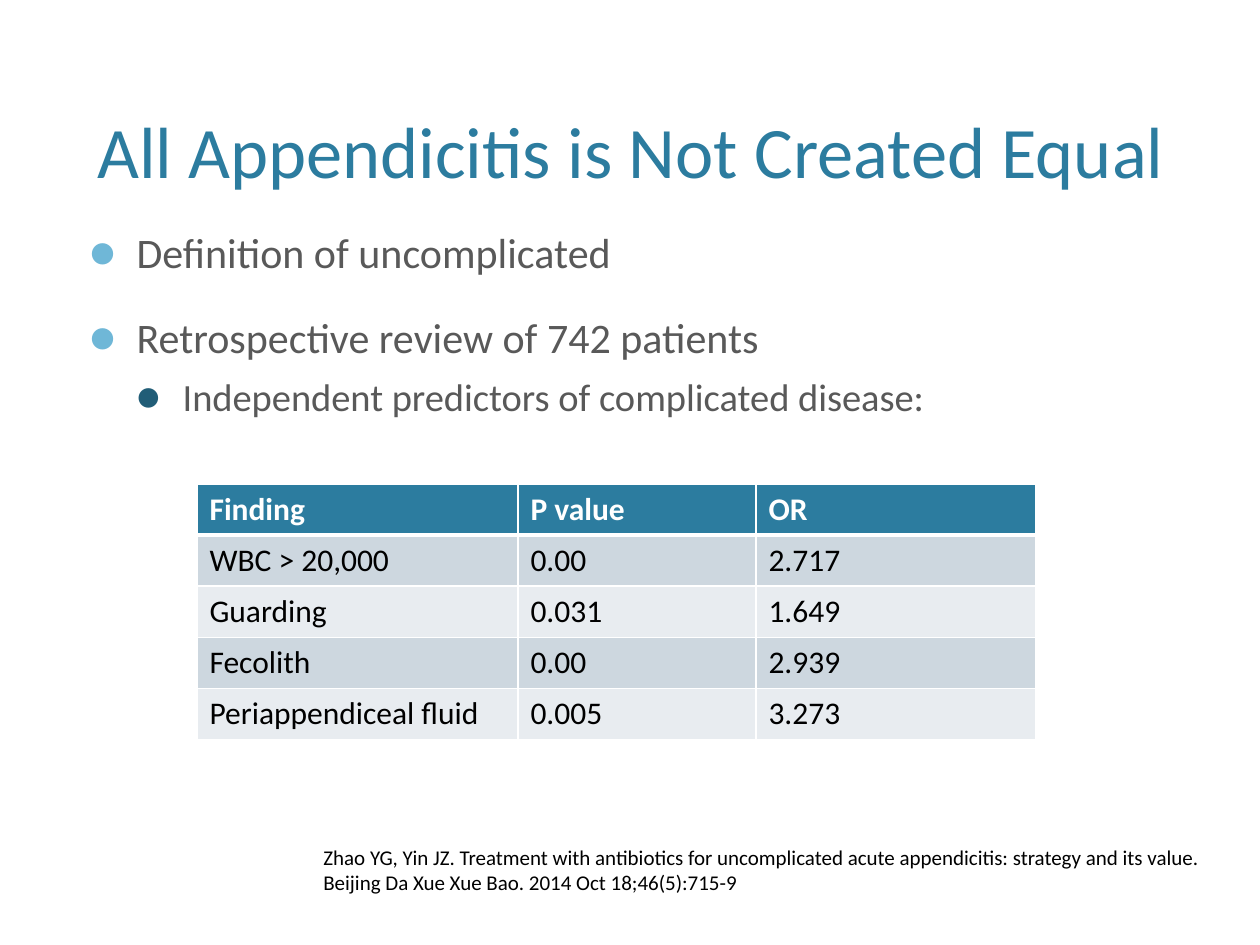
import pptx
import pptx.dml.color
import pptx.enum.text
import pptx.oxml
import pptx.oxml.ns
import pptx.util

PX = 914400 / 126
FONT = "Calibri"
TEAL = "2C7C9F"
GRAY = "595959"
NS = pptx.oxml.ns.nsdecls("a")

BULLETS = [
    (0, "Definition of uncomplicated"),
    (0, "Retrospective review of 742 patients"),
    (1, "Independent predictors of complicated disease:"),
]
LEVELS = [
    {"indent": 48, "hang": 48, "before": 20, "size": 24, "bullet": "6FB7D7"},
    {"indent": 94, "hang": 47, "before": 6, "size": 22, "bullet": "215D77"},
]
FINDINGS = [
    ("Finding", "P value", "OR"),
    ("WBC > 20,000", "0.00", "2.717"),
    ("Guarding", "0.031", "1.649"),
    ("Fecolith", "0.00", "2.939"),
    ("Periappendiceal fluid", "0.005", "3.273"),
]
CITATION = [
    "Zhao YG, Yin JZ. Treatment with antibiotics for uncomplicated acute "
    "appendicitis: strategy and its value.",
    "Beijing Da Xue Xue Bao. 2014 Oct 18;46(5):715-9",
]


def px(n):
    return pptx.util.Emu(round(n * PX))


def rgb(color):
    return pptx.dml.color.RGBColor.from_string(color)


def place(sp, box):
    for name, value in zip(("left", "top", "width", "height"), box):
        setattr(sp, name, px(value))


def set_text(p, text, size, color, bold=False):
    r = p.add_run()
    r.text = text
    r.font.color.rgb = rgb(color)
    style = {"name": FONT, "size": pptx.util.Pt(size), "bold": bold}
    for name, value in style.items():
        setattr(r.font, name, value)


def set_frame(tf, anchor):
    style = {
        "word_wrap": True,
        "auto_size": pptx.enum.text.MSO_AUTO_SIZE.NONE,
        "vertical_anchor": anchor,
    }
    for name, value in style.items():
        setattr(tf, name, value)


def next_paragraph(tf, i):
    return tf.add_paragraph() if i else tf.paragraphs[0]


def set_bullet(p, level):
    p.space_before = pptx.util.Pt(level["before"])
    pPr = p._p.get_or_add_pPr()
    pPr.set("marL", str(px(level["indent"])))
    pPr.set("indent", str(-px(level["hang"])))
    for xml in (
        f'<a:buClr {NS}><a:srgbClr val="{level["bullet"]}"/></a:buClr>',
        f'<a:buSzPct {NS} val="110000"/>',
        f'<a:buFont {NS} typeface="{FONT}"/>',
        f'<a:buChar {NS} char="●"/>',
    ):
        pPr.append(pptx.oxml.parse_xml(xml))


def set_borders(cell, widths):
    tcPr = cell._tc.get_or_add_tcPr()
    for side, width in widths.items():
        tcPr.append(pptx.oxml.parse_xml(
            f'<a:ln{side} {NS} w="{pptx.util.Pt(width)}"><a:solidFill>'
            f'<a:srgbClr val="FFFFFF"/></a:solidFill></a:ln{side}>'))


def add_title(s, box):
    sp = s.shapes.title
    place(sp, box)
    set_frame(sp.text_frame, pptx.enum.text.MSO_ANCHOR.BOTTOM)
    p = sp.text_frame.paragraphs[0]
    p.alignment = pptx.enum.text.PP_ALIGN.CENTER
    set_text(p, "All Appendicitis is Not Created Equal", 41.4, TEAL)


def add_body(s, box):
    sp = s.placeholders[1]
    place(sp, box)
    tf = sp.text_frame
    set_frame(tf, pptx.enum.text.MSO_ANCHOR.TOP)
    for i, (depth, text) in enumerate(BULLETS):
        p = next_paragraph(tf, i)
        p.level = depth
        set_bullet(p, LEVELS[depth])
        set_text(p, text, LEVELS[depth]["size"], GRAY)


def add_findings(s, left, top, widths, row_height):
    box = (left, top, sum(widths), row_height * len(FINDINGS))
    shape = s.shapes.add_table(len(FINDINGS), len(widths), *map(px, box))
    table = shape.table
    for column, width in zip(table.columns, widths):
        column.width = px(width)
    for i, values in enumerate(FINDINGS):
        table.rows[i].height = px(row_height)
        header = i == 0
        fill = TEAL if header else ("E8ECF0", "CDD7DF")[i % 2]
        color = "FFFFFF" if header else "000000"
        borders = {"L": 1, "R": 1, "T": 3 if i == 1 else 1, "B": 3 if header else 1}
        for j, text in enumerate(values):
            cell = table.cell(i, j)
            set_borders(cell, borders)
            cell.fill.solid()
            cell.fill.fore_color.rgb = rgb(fill)
            set_text(cell.text_frame.paragraphs[0], text, 18, color, header)


def add_citation(s, box):
    tf = s.shapes.add_textbox(*map(px, box)).text_frame
    set_frame(tf, pptx.enum.text.MSO_ANCHOR.TOP)
    for i, line in enumerate(CITATION):
        set_text(next_paragraph(tf, i), line, 12, "000000")


def main():
    prs = pptx.Presentation()
    prs.slide_width, prs.slide_height = px(1260), px(945)
    s = prs.slides.add_slide(prs.slide_layouts[1])
    add_title(s, (76, 15, 1109, 184))
    add_body(s, (76, 220, 1109, 599))
    add_findings(s, 197, 484, (321, 238, 280), 51)
    add_citation(s, (311, 838, 907, 63))
    prs.save("out.pptx")


if __name__ == "__main__":
    main()
